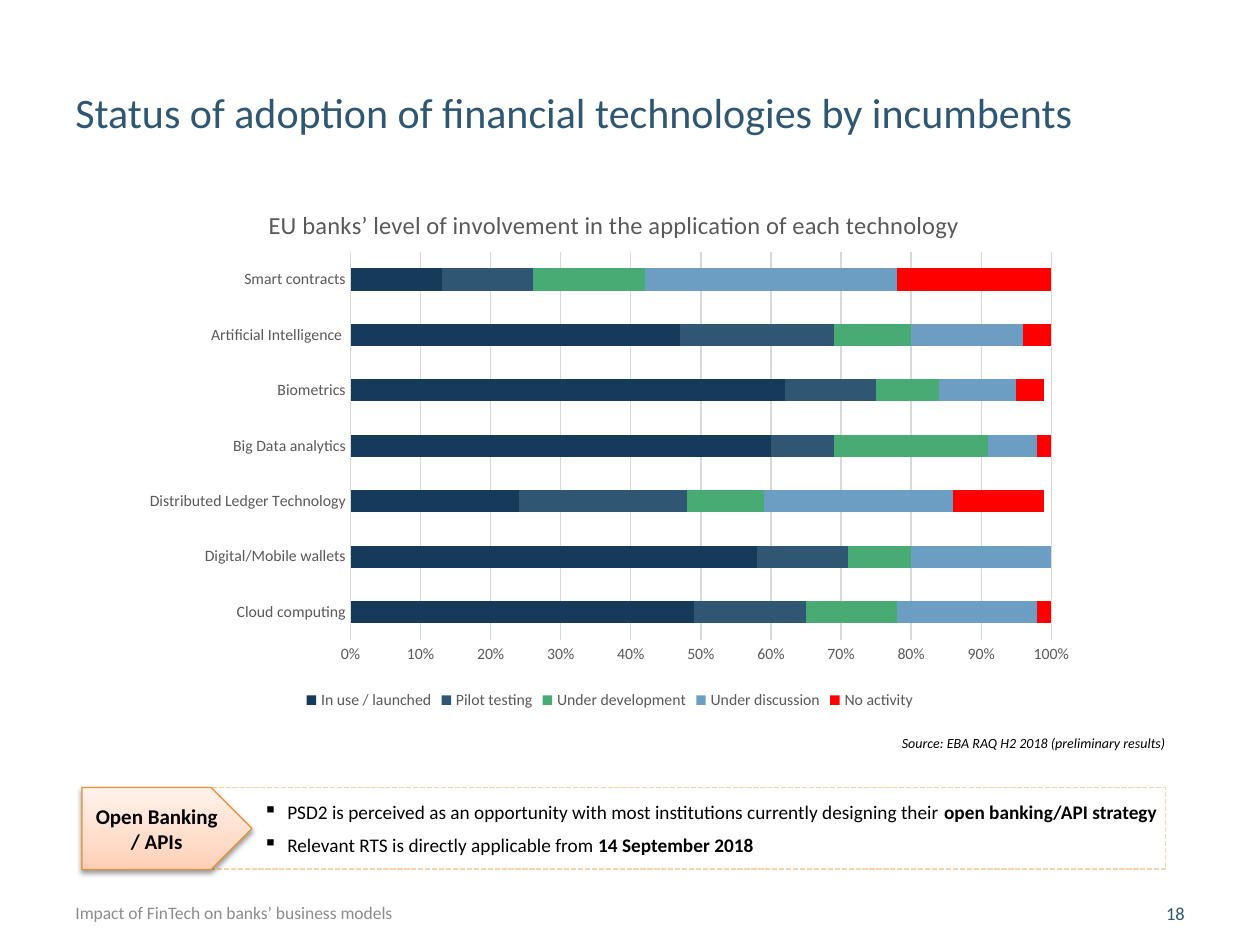
from dataclasses import dataclass

from lxml.etree import SubElement as Sub
from pptx import Presentation
from pptx.chart.data import CategoryChartData
from pptx.dml.color import RGBColor
from pptx.enum.chart import XL_CHART_TYPE as Chart, XL_LEGEND_POSITION as Legend, XL_TICK_MARK as Tick
from pptx.enum.dml import MSO_LINE as Dash
from pptx.enum.shapes import MSO_SHAPE as Shape
from pptx.enum.text import MSO_ANCHOR as Anchor, PP_ALIGN as Align
from pptx.oxml.ns import qn
from pptx.util import Inches, Pt


@dataclass(frozen=True)
class Theme:
    font: str = "Calibri"
    ink: str = "000000"
    blue: str = "2F5773"
    gray: str = "595959"
    pale: str = "8C8C8C"
    grid: str = "D9D9D9"
    white: str = "FFFFFF"
    edge: str = "E99035"
    dash: str = "F6D2AD"
    glow: tuple = ((0, "FFCFB5"), (35, "FFDDCB"), (100, "FFF2EB"))
    head: float = 24
    sub: float = 14
    label: float = 12
    body: float = 11
    page: float = 10.5
    foot: float = 10
    axis: float = 9
    note: float = 8


T = Theme()
LEFT, RIGHT = Align.LEFT, Align.RIGHT
TEXTS = [
    ("18", (8.65, 7.11, 0.85, 0.24), T.page, T.blue, RIGHT, False),
    ("Status of adoption of financial technologies by incumbents",
     (0.5, 0.64, 8.15, 0.61), T.head, T.blue, LEFT, False),
    ("Source: EBA RAQ H2 2018 (preliminary results)",
     (7.06, 5.78, 2.3, 0.24), T.note, T.ink, LEFT, True),
    ("Impact of FinTech on banks’ business models",
     (0.5, 7.11, 5.38, 0.24), T.foot, T.pale, LEFT, False),
]
TITLE = "EU banks’ level of involvement in the application of each technology"
CATS = ["Cloud computing", "Digital/Mobile wallets", "Distributed Ledger Technology",
        "Big Data analytics", "Biometrics", "Artificial Intelligence ", "Smart contracts"]
SERIES = [
    ("In use / launched", "163A5A", (0.49, 0.58, 0.24, 0.6, 0.62, 0.47, 0.13)),
    ("Pilot testing", "2F5773", (0.16, 0.13, 0.24, 0.09, 0.13, 0.22, 0.13)),
    ("Under development", "49AB74", (0.13, 0.09, 0.11, 0.22, 0.09, 0.11, 0.16)),
    ("Under discussion", "6B9EC2", (0.2, 0.2, 0.27, 0.07, 0.11, 0.16, 0.36)),
    ("No activity", "FF0000", (0.02, 0, 0.13, 0.02, 0.04, 0.04, 0.22)),
]
LABEL = "Open Banking / APIs"
POINTS = [
    ("PSD2 is perceived as an opportunity with most institutions currently designing their ",
     "open banking/API strategy"),
    ("Relevant RTS is directly applicable from ", "14 September 2018"),
]


def rgb(code):
    return RGBColor.from_string(code)


def style(font, size, color):
    font.name, font.size = T.font, Pt(size)
    font.color.rgb = rgb(color)


def place(box):
    return [Inches(v) for v in box]


def add_text(slide, text, box, size, color, align, slant):
    frame = slide.shapes.add_textbox(*place(box)).text_frame
    frame.word_wrap = True
    para = frame.paragraphs[0]
    para.text, para.alignment = text, align
    style(para.font, size, color)
    para.font.italic = slant


def add_form(slide, kind, box, edge, width):
    form = slide.shapes.add_shape(kind, *place(box))
    form.shadow.inherit = False
    form.line.color.rgb = rgb(edge)
    form.line.width = Pt(width)
    form.text_frame.word_wrap = True
    form.text_frame.vertical_anchor = Anchor.MIDDLE
    return form


def add_points(slide):
    form = add_form(slide, Shape.RECTANGLE, (1.66, 6.25, 7.59, 0.65), T.dash, 1)
    form.fill.solid()
    form.fill.fore_color.rgb = rgb(T.white)
    form.line.dash_style = Dash.SQUARE_DOT
    frame = form.text_frame
    frame.margin_left, frame.margin_right = Inches(0.43), Inches(0.04)
    for i, (plain, bold) in enumerate(POINTS):
        para = frame.add_paragraph() if i else frame.paragraphs[0]
        para.alignment = LEFT
        if i:
            para.space_before = Pt(3)
        para.space_after = Pt(3)
        props = para._p.get_or_add_pPr()
        props.set("marL", str(Inches(0.19)))
        props.set("indent", str(-Inches(0.19)))
        Sub(props, qn("a:buChar"), char="▪")
        style(para.font, T.body, T.ink)
        para.add_run().text = plain
        run = para.add_run()
        run.text, run.font.bold = bold, True


def add_label(slide):
    form = add_form(slide, Shape.PENTAGON, (0.65, 6.25, 1.35, 0.65), T.edge, 0.75)
    form.fill.gradient()
    form.fill.gradient_angle = 90
    props = form._element.spPr
    stops = props.find(".//" + qn("a:gsLst"))
    for stop in list(stops):
        stops.remove(stop)
    for pos, code in T.glow:
        stop = Sub(stops, qn("a:gs"), pos=str(pos * 1000))
        Sub(stop, qn("a:srgbClr"), val=code)
    shade = Sub(props.find(qn("a:effectLst")), qn("a:outerShdw"), blurRad=str(Pt(3.1)),
                dist=str(Pt(1.6)), dir="5400000", rotWithShape="0")
    Sub(Sub(shade, qn("a:srgbClr"), val=T.ink), qn("a:alpha"), val="38000")
    para = form.text_frame.paragraphs[0]
    para.text, para.alignment = LABEL, Align.CENTER
    style(para.font, T.label, T.ink)
    para.font.bold = True


def set_layout(host, after, **parts):
    for old in host.findall(qn("c:layout")):
        host.remove(old)
    layout = Sub(host, qn("c:layout"))
    host.insert(after, layout)
    manual = Sub(layout, qn("c:manualLayout"))
    if "w" in parts:
        Sub(manual, qn("c:layoutTarget"), val="inner")
    for key in "xy":
        Sub(manual, qn(f"c:{key}Mode"), val="edge")
    for key, part in parts.items():
        Sub(manual, qn(f"c:{key}"), val=str(part))


def add_bars(slide):
    data = CategoryChartData(number_format="0%")
    data.categories = CATS
    for name, _, vals in SERIES:
        data.add_series(name, vals)
    chart = slide.shapes.add_chart(
        Chart.BAR_STACKED, *place((1.03, 1.45, 7.62, 4.22)), data).chart
    style(chart.font, T.foot, T.ink)
    chart.has_title = True
    para = chart.chart_title.text_frame.paragraphs[0]
    para.text = TITLE
    style(para.font, T.sub, T.gray)
    para.font.bold = False
    set_layout(chart.chart_title._element, 1, x=0.14, y=0.04)
    set_layout(chart._chartSpace.chart.plotArea, 0, x=0.23, y=0.13, w=0.73, h=0.73)
    plot = chart.plots[0]
    plot.gap_width, plot.overlap, plot.vary_by_categories = 150, 100, False
    for bars, (_, color, _) in zip(plot.series, SERIES):
        bars.format.fill.solid()
        bars.format.fill.fore_color.rgb = rgb(color)
    cat, val = chart.category_axis, chart.value_axis
    for axis in (cat, val):
        axis.major_tick_mark = axis.minor_tick_mark = Tick.NONE
        style(axis.tick_labels.font, T.axis, T.gray)
    val.minimum_scale, val.maximum_scale, val.major_unit = 0, 1, 0.1
    val.tick_labels.number_format = "0%"
    val.tick_labels.number_format_is_linked = False
    val.format.line.fill.background()
    val.has_major_gridlines = True
    for line in (cat.format.line, val.major_gridlines.format.line):
        line.color.rgb, line.width = rgb(T.grid), Pt(0.75)
    chart.has_legend = True
    chart.legend.position = Legend.BOTTOM
    chart.legend.include_in_layout = False
    style(chart.legend.font, T.axis, T.gray)


def main():
    """Build the slide on the adoption of financial technologies."""
    deck = Presentation()
    deck.slide_width, deck.slide_height = Inches(10), Inches(7.5)
    slide = deck.slides.add_slide(deck.slide_layouts[6])
    for item in TEXTS:
        add_text(slide, *item)
    add_points(slide)
    add_label(slide)
    add_bars(slide)
    deck.save("out.pptx")


if __name__ == "__main__":
    main()
